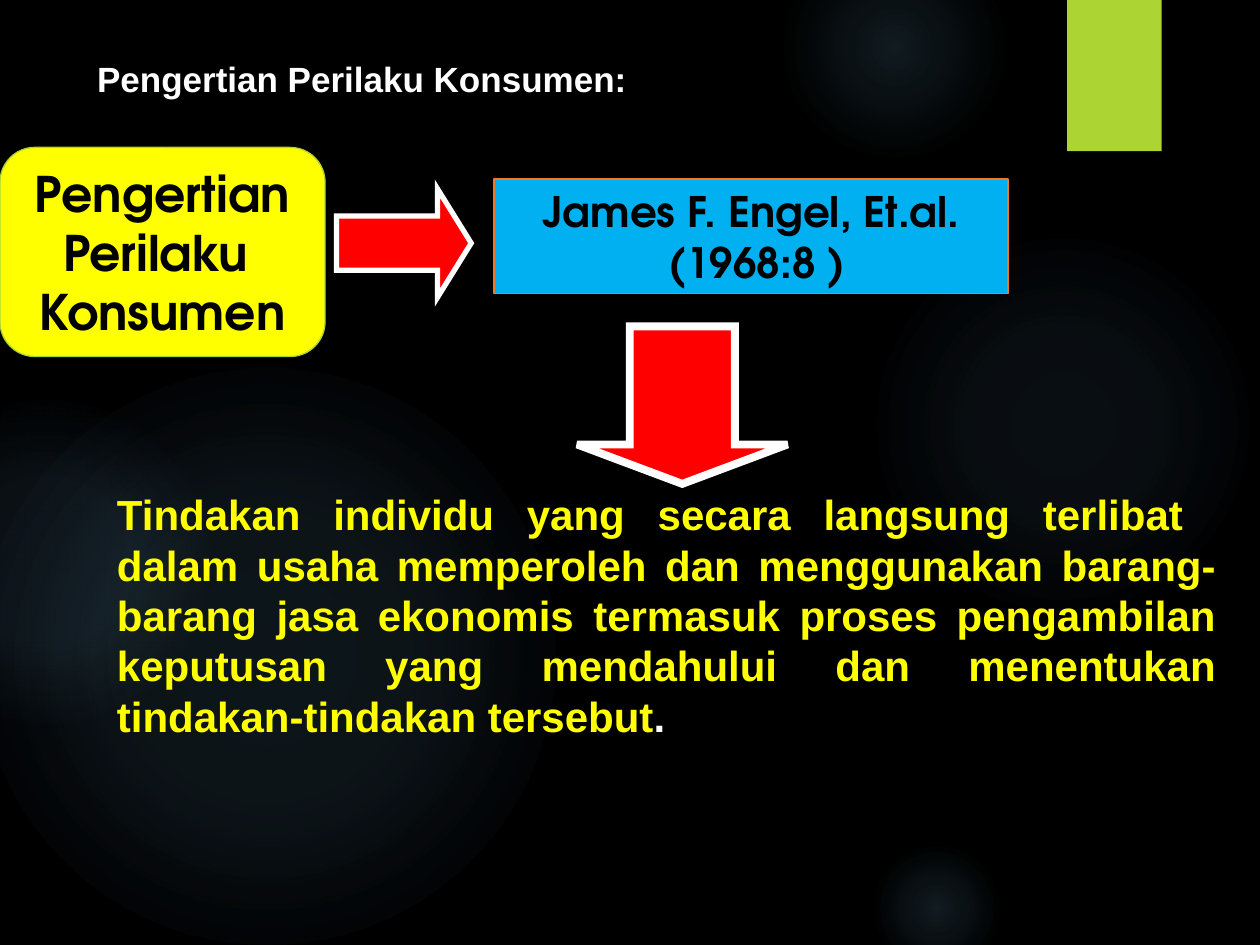
from pptx import Presentation
from pptx import util as u
from pptx.dml.color import RGBColor
from pptx.enum import shapes, text
from pptx.oxml import parse_xml
from pptx.oxml.ns import nsdecls, qn

SCALE = 9144
COLORS = {
    "night": "000000", "ink": "000000", "glow": "7AC4F0", "lime": "ACD433",
    "red": "FF0000", "white": "FFFFFF", "yellow": "FFFF00",
    "sky": "00B0F0", "orange": "EF7A24",
}
BODY_FONT = "Arial"
LABEL_FONT = "TeX Gyre Adventor"
GLOWS = [
    ((689, 183, 308), ((0, 7), (36, 6), (69, 0))),
    ((622, -50, 175), ((0, 14), (36, 7), (73, 0))),
    ((689, 667, 108), ((0, 14), (36, 7), (66, 0))),
    ((-17, 292, 458), ((0, 11), (36, 10), (75, 0))),
    ((-92, 317, 258), ((0, 8), (36, 8), (72, 0))),
]
DEFINITION = (
    "Tindakan individu yang secara langsung terlibat  dalam usaha memperoleh "
    "dan menggunakan barang-barang jasa ekonomis termasuk proses pengambilan "
    "keputusan yang mendahului dan menentukan tindakan-tindakan tersebut"
)


def px(value):
    return u.Emu(value * SCALE)


def color(name):
    return RGBColor.from_string(COLORS[name])


def add_span(para, words, font, size, tint):
    span = para.add_run()
    span.text = words
    span.font.name = font
    span.font.size = u.Pt(size)
    span.font.bold = True
    span.font.color.rgb = color(tint)


def add_block(page, kind, box, fill, line=None, width=0.75):
    block = page.shapes.add_shape(kind, *map(px, box))
    block.shadow.inherit = False
    block.fill.solid()
    block.fill.fore_color.rgb = color(fill)
    if line:
        block.line.color.rgb = color(line)
        block.line.width = u.Pt(width)
    else:
        block.line.fill.background()
    return block


def add_glow(page, box, stops):
    left, top, side = box
    glow = add_block(page, shapes.MSO_SHAPE.OVAL, (left, top, side, side), "glow")
    gradient = parse_xml(
        f'<a:gradFill {nsdecls("a")} rotWithShape="1"><a:gsLst/><a:path path="circle">'
        '<a:fillToRect l="50000" t="50000" r="50000" b="50000"/></a:path></a:gradFill>'
    )
    for place, opacity in stops:
        gradient[0].append(parse_xml(
            f'<a:gs {nsdecls("a")} pos="{place * 1000}"><a:srgbClr val="{COLORS["glow"]}">'
            f'<a:alpha val="{opacity * 1000}"/></a:srgbClr></a:gs>'
        ))
    properties = glow.element.spPr
    properties.replace(properties.find(qn("a:solidFill")), gradient)


def add_backdrop(page):
    page.background.fill.solid()
    page.background.fill.fore_color.rgb = color("night")
    for box, stops in GLOWS:
        add_glow(page, box, stops)
    add_block(page, shapes.MSO_SHAPE.RECTANGLE, (847, 0, 75, 120), "lime")


def add_arrow(page, box, head, width, turn=0):
    arrow = add_block(page, shapes.MSO_SHAPE.RIGHT_ARROW, box, "red", "white", width)
    arrow.adjustments[0] = 0.5
    arrow.adjustments[1] = head
    arrow.rotation = turn
    outline = arrow.element.spPr.find(qn("a:ln"))
    outline.append(parse_xml(f'<a:miter {nsdecls("a")} lim="800000"/>'))


def add_label(page, kind, box, fill, line, lines, size):
    label = add_block(page, kind, box, fill, line)
    frame = label.text_frame
    frame.word_wrap = True
    frame.vertical_anchor = text.MSO_ANCHOR.MIDDLE
    for index, words in enumerate(lines):
        para = frame.add_paragraph() if index else frame.paragraphs[0]
        para.alignment = text.PP_ALIGN.CENTER
        add_span(para, words, LABEL_FONT, size, "ink")


def place_title(page, box):
    title = page.shapes.title
    title.left, title.top, title.width, title.height = map(px, box)
    frame = title.text_frame
    frame.word_wrap = False
    frame.auto_size = text.MSO_AUTO_SIZE.NONE
    frame.vertical_anchor = text.MSO_ANCHOR.TOP
    para = frame.paragraphs[0]
    para.alignment = text.PP_ALIGN.LEFT
    add_span(para, "Pengertian Perilaku Konsumen:", BODY_FONT, 20, "white")


def add_definition(page, box):
    frame = page.shapes.add_textbox(*map(px, box)).text_frame
    frame.word_wrap = True
    para = frame.paragraphs[0]
    para.alignment = text.PP_ALIGN.JUSTIFY
    add_span(para, DEFINITION, BODY_FONT, 24, "yellow")
    add_span(para, ".", BODY_FONT, 24, "white")


def main():
    deck = Presentation()
    deck.slide_width, deck.slide_height = px(1000), px(750)
    page = deck.slides.add_slide(deck.slide_layouts[5])
    add_backdrop(page)
    add_arrow(page, (267, 150, 107, 86), 0.31, 3)
    add_arrow(page, (479, 238, 125, 167), 0.25, 4.5, 90)
    place_title(page, (67, 41, 444, 44))
    add_definition(page, (83, 383, 892, 212))
    add_label(page, shapes.MSO_SHAPE.RECTANGLE, (392, 142, 408, 91), "sky", "orange",
              ["James F. Engel, Et.al.", " (1968:8 )"], 24)
    add_label(page, shapes.MSO_SHAPE.ROUNDED_RECTANGLE, (0, 117, 258, 166), "yellow", "lime",
              ["Pengertian", "Perilaku ", "Konsumen"], 28)
    deck.save("out.pptx")


if __name__ == "__main__":
    main()
